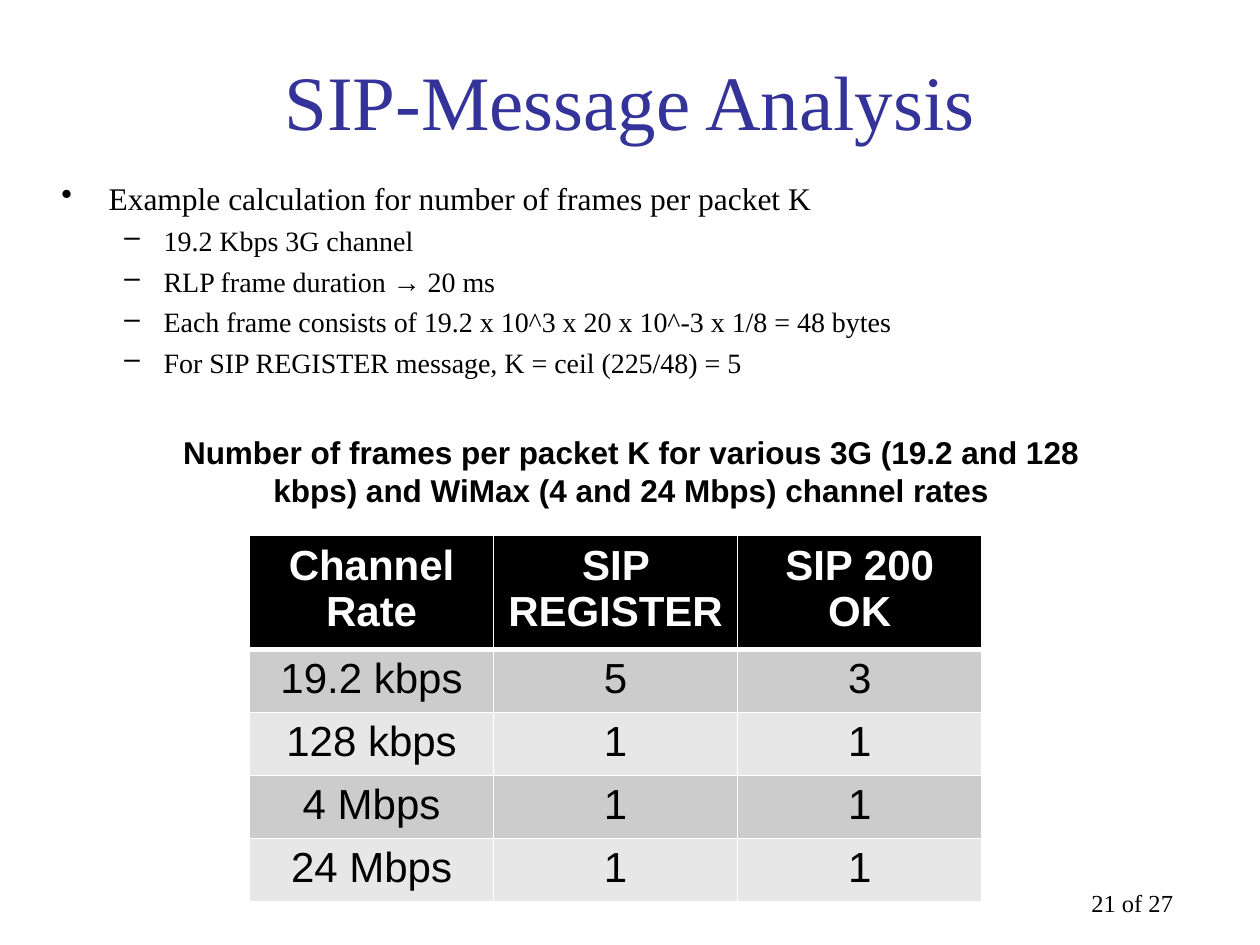
from lxml import etree
from pptx import Presentation
from pptx import util as u
from pptx.dml.color import RGBColor
from pptx.enum import text
from pptx.oxml.ns import qn

TITLE = "SIP-Message Analysis"
CALCULATION = [
    (0, "Example calculation for number of frames per packet K"),
    (1, "19.2 Kbps 3G channel"),
    (1, "RLP frame duration → 20 ms"),
    (1, "Each frame consists of 19.2 x 10^3 x 20 x 10^-3 x 1/8 = 48 bytes"),
    (1, "For SIP REGISTER message, K = ceil (225/48) = 5"),
]
CAPTION = ("Number of frames per packet K for various 3G (19.2 and 128 kbps) "
           "and WiMax (4 and 24 Mbps) channel rates")
FRAMES = [
    ("Channel Rate", "SIP REGISTER", "SIP 200 OK"),
    ("19.2 kbps", "5", "3"),
    ("128 kbps", "1", "1"),
    ("4 Mbps", "1", "1"),
    ("24 Mbps", "1", "1"),
]
PAGE = "21 of 27"

THEME = {
    "serif": "Times New Roman", "sans": "Arial",
    "ink": "000000", "title": "333399", "paper": "FFFFFF",
    "header": "000000", "bands": ("CCCCCC", "E7E7E7"),
    "title_size": 44, "levels": (18, 16), "caption_size": 18,
    "table_size": 24, "page_size": 14,
}
# bullet, left margin and hanging indent in cm, for each level
BULLETS = [("•", 0.95, 0.95), ("–", 2.06, 0.79)]
ALIGN = text.PP_ALIGN


def write(paragraph, words, *, size, font=THEME["serif"], color=THEME["ink"],
          bold=False, align=ALIGN.LEFT):
    paragraph.alignment = align
    run = paragraph.add_run()
    run.text = words
    run.font.size = u.Pt(size)
    run.font.name = font
    run.font.bold = bold
    run.font.color.rgb = RGBColor.from_string(color)


def add_frame(slide, left, top, width, height, anchor=text.MSO_ANCHOR.TOP):
    box = slide.shapes.add_textbox(u.Cm(left), u.Cm(top), u.Cm(width), u.Cm(height))
    box.text_frame.word_wrap = True
    box.text_frame.vertical_anchor = anchor
    return box.text_frame


def set_bullet(paragraph, level):
    char, margin, hang = BULLETS[level]
    paragraph.level = level
    properties = paragraph._p.get_or_add_pPr()
    properties.set("marL", str(u.Cm(margin)))
    properties.set("indent", str(-u.Cm(hang)))
    etree.SubElement(properties, qn("a:buChar"), char=char)


def set_borders(cell, **widths):
    """Draw the cell's L, R, T and B borders at the given point widths."""
    properties = cell._tc.get_or_add_tcPr()
    for side, width in widths.items():
        line = etree.SubElement(properties, qn(f"a:ln{side}"), w=str(u.Pt(width)))
        fill = etree.SubElement(line, qn("a:solidFill"))
        etree.SubElement(fill, qn("a:srgbClr"), val=THEME["paper"])


def add_calculation(slide):
    frame = add_frame(slide, 0.99, 3.48, 23.5, 13.31)
    for index, (level, words) in enumerate(CALCULATION):
        paragraph = frame.add_paragraph() if index else frame.paragraphs[0]
        set_bullet(paragraph, level)
        if index:
            paragraph.space_before = u.Pt(4)
        write(paragraph, words, size=THEME["levels"][level])


def add_frames_table(slide):
    table = slide.shapes.add_table(len(FRAMES), len(FRAMES[0]), u.Cm(5.03), u.Cm(10.8),
                                   u.Cm(14.76), u.Cm(5.13)).table
    for column in table.columns:
        column.width = u.Cm(4.92)
    for r, values in enumerate(FRAMES):
        is_header = r == 0
        table.rows[r].height = u.Cm(0.87 if is_header else 1.04)
        background = THEME["header"] if is_header else THEME["bands"][(r - 1) % 2]
        for c, words in enumerate(values):
            cell = table.cell(r, c)
            set_borders(cell, L=1, R=1, T=3 if r == 1 else 1, B=3 if is_header else 1)
            cell.fill.solid()
            cell.fill.fore_color.rgb = RGBColor.from_string(background)
            write(cell.text_frame.paragraphs[0], words, size=THEME["table_size"],
                  font=THEME["sans"], bold=is_header, align=ALIGN.CENTER,
                  color=THEME["paper"] if is_header else THEME["ink"])


def main():
    deck = Presentation()
    deck.slide_width, deck.slide_height = u.Cm(25.4), u.Cm(19.05)
    slide = deck.slides.add_slide(deck.slide_layouts[6])

    page = add_frame(slide, 18.62, 17.78, 5.28, 1.27)
    write(page.paragraphs[0], PAGE, size=THEME["page_size"], align=ALIGN.RIGHT)
    title = add_frame(slide, 1.9, 0.43, 21.6, 3.18, anchor=text.MSO_ANCHOR.MIDDLE)
    write(title.paragraphs[0], TITLE, size=THEME["title_size"],
          color=THEME["title"], align=ALIGN.CENTER)
    add_calculation(slide)
    add_frames_table(slide)
    caption = add_frame(slide, 2.69, 8.61, 20.07, 1.8)
    write(caption.paragraphs[0], CAPTION, size=THEME["caption_size"],
          font=THEME["sans"], bold=True, align=ALIGN.CENTER)

    deck.save("out.pptx")


if __name__ == "__main__":
    main()
